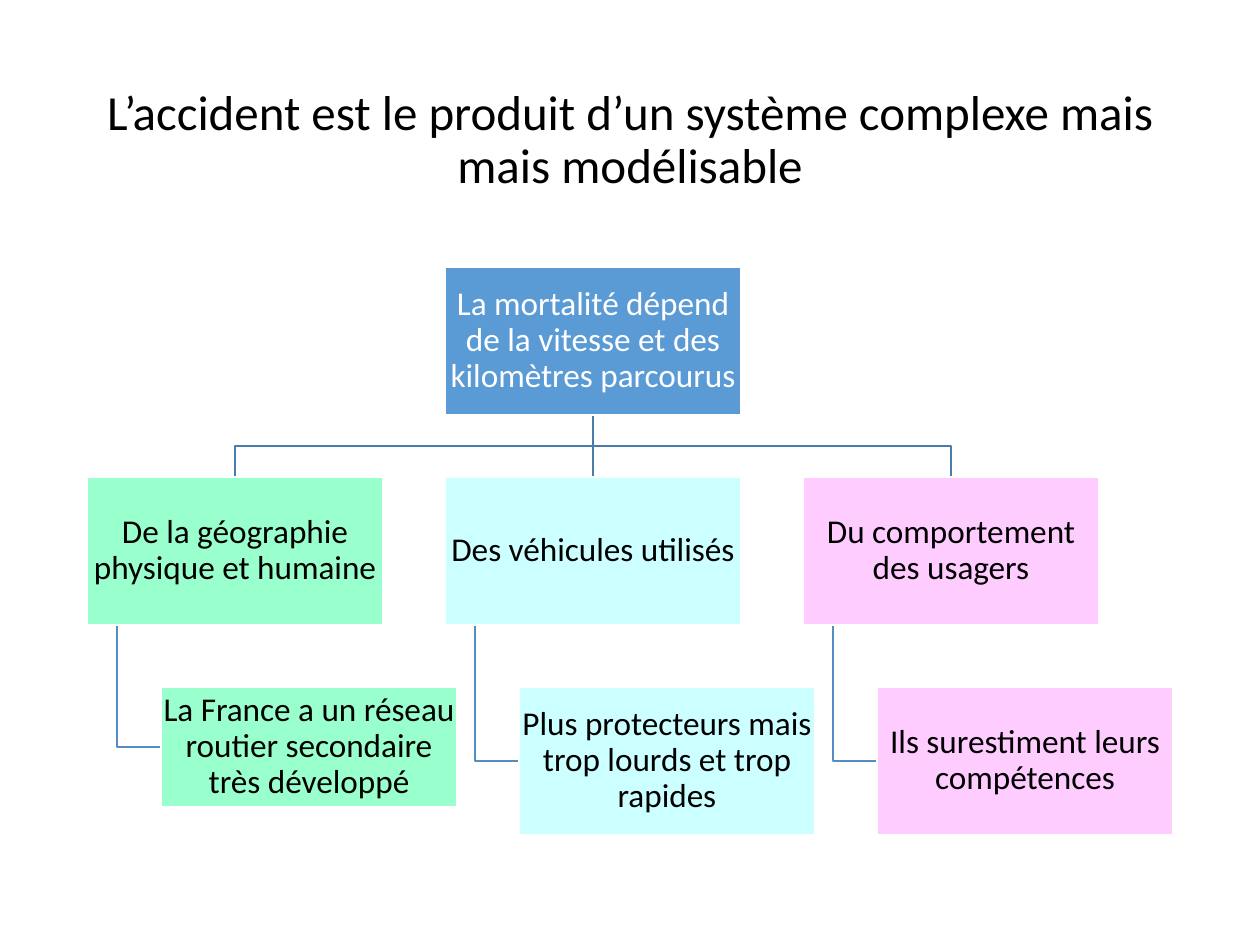
from dataclasses import dataclass

from lxml.etree import SubElement
from pptx import Presentation
from pptx.dml.color import RGBColor
from pptx.enum.shapes import MSO_CONNECTOR as Connector, MSO_SHAPE as Shape
from pptx.enum.text import MSO_ANCHOR as Anchor, MSO_AUTO_SIZE as AutoSize, PP_ALIGN as Align
from pptx.oxml.ns import qn
from pptx.util import Emu, Pt

SCALE = 914400 / 126
FONT = "Calibri"
BLACK, WHITE = "000000", "FFFFFF"
TRUNK_COLOR, BRANCH_COLOR = "497CAB", "538DC1"
BOX_WIDTH, BOX_HEIGHT = 296, 148
LEFT, COLUMN_PITCH = 87, 358
TOP, ROW_PITCH = 267, 210
CHILD_INDENT, BRANCH_INDENT = 74, 30
TITLE = "L’accident est le produit d’un système complexe mais mais modélisable"
ROOT = "La mortalité dépend de la vitesse et des kilomètres parcourus"


@dataclass(frozen=True)
class Factor:
    """A cause of mortality, its consequence and their shared colour."""
    cause: str
    effect: str
    fill: str
    effect_height: int = BOX_HEIGHT


FACTORS = [
    Factor("De la géographie physique et humaine",
           "La France a un réseau routier secondaire très développé", "99FFCC", 120),
    Factor("Des véhicules utilisés",
           "Plus protecteurs mais trop lourds et trop rapides", "CCFFFF"),
    Factor("Du comportement des usagers", "Ils surestiment leurs compétences", "FFCCFF"),
]


def px(length: int) -> Emu:
    """Turn pixels into EMU."""
    return Emu(round(length * SCALE))


def rgb(color: str) -> RGBColor:
    """Turn a hex string into a colour."""
    return RGBColor.from_string(color)


def format_text(frame, size: int, color: str) -> None:
    """Centre a text frame's paragraph and set its font."""
    frame.word_wrap = True
    frame.auto_size = AutoSize.NONE
    frame.vertical_anchor = Anchor.MIDDLE
    para = frame.paragraphs[0]
    para.alignment = Align.CENTER
    para.line_spacing = 0.9
    para.font.name = FONT
    para.font.size = Pt(size)
    para.font.color.rgb = rgb(color)


def add_title(page) -> None:
    """Fill and place the title placeholder."""
    title = page.shapes.title
    title.left, title.top, title.width, title.height = map(px, (87, 50, 1086, 183))
    title.text_frame.text = TITLE
    format_text(title.text_frame, 28, BLACK)


def add_box(page, text: str, left: int, top: int, fill: str,
            height: int = BOX_HEIGHT, color: str = BLACK) -> None:
    """Draw one labelled box of the hierarchy."""
    box = page.shapes.add_shape(Shape.RECTANGLE, px(left), px(top), px(BOX_WIDTH), px(height))
    box.shadow.inherit = False
    box.fill.solid()
    box.fill.fore_color.rgb = rgb(fill)
    box.line.color.rgb = rgb(WHITE)
    box.line.width = Pt(1)
    frame = box.text_frame
    frame.margin_left = frame.margin_right = frame.margin_top = frame.margin_bottom = px(1)
    frame.text = text
    format_text(frame, 19, color)


def add_elbow(page, points: list[tuple[int, int]], color: str) -> None:
    """Draw an open line through the points, as a connector when it is straight."""
    (start_x, start_y), (end_x, end_y) = points[0], points[-1]
    if start_x == end_x:
        line = page.shapes.add_connector(
            Connector.STRAIGHT, px(start_x), px(start_y), px(end_x), px(end_y))
        SubElement(line._element.spPr, qn("a:effectLst"))
    else:
        builder = page.shapes.build_freeform(start_x, start_y, scale=SCALE)
        builder.add_line_segments(points[1:], close=False)
        line = builder.convert_to_shape()
        line.shadow.inherit = False
        line.fill.background()
    line.line.color.rgb = rgb(color)
    line.line.width = Pt(1)


def add_hierarchy(page) -> None:
    """Draw the connecting lines and then the boxes."""
    root_left = LEFT + COLUMN_PITCH
    root_x, root_bottom = root_left + BOX_WIDTH // 2, TOP + BOX_HEIGHT
    cause_top, effect_top = TOP + ROW_PITCH, TOP + 2 * ROW_PITCH
    middle_y = (root_bottom + cause_top) // 2
    lefts = [LEFT + column * COLUMN_PITCH for column in range(len(FACTORS))]
    for left, factor in zip(lefts, FACTORS):
        center_x, branch_x = left + BOX_WIDTH // 2, left + BRANCH_INDENT
        effect_y = effect_top + factor.effect_height // 2
        add_elbow(page, [(root_x, root_bottom), (root_x, middle_y),
                         (center_x, middle_y), (center_x, cause_top)], TRUNK_COLOR)
        add_elbow(page, [(branch_x, cause_top + BOX_HEIGHT), (branch_x, effect_y),
                         (left + CHILD_INDENT, effect_y)], BRANCH_COLOR)
    add_box(page, ROOT, root_left, TOP, "5B9BD5", color=WHITE)
    for left, factor in zip(lefts, FACTORS):
        add_box(page, factor.cause, left, cause_top, factor.fill)
        add_box(page, factor.effect, left + CHILD_INDENT, effect_top,
                factor.fill, factor.effect_height)


def main() -> None:
    """Build and save the deck."""
    deck = Presentation()
    deck.slide_width, deck.slide_height = px(1260), px(945)
    page = deck.slides.add_slide(deck.slide_layouts[5])
    add_title(page)
    add_hierarchy(page)
    deck.save("out.pptx")


if __name__ == "__main__":
    main()
